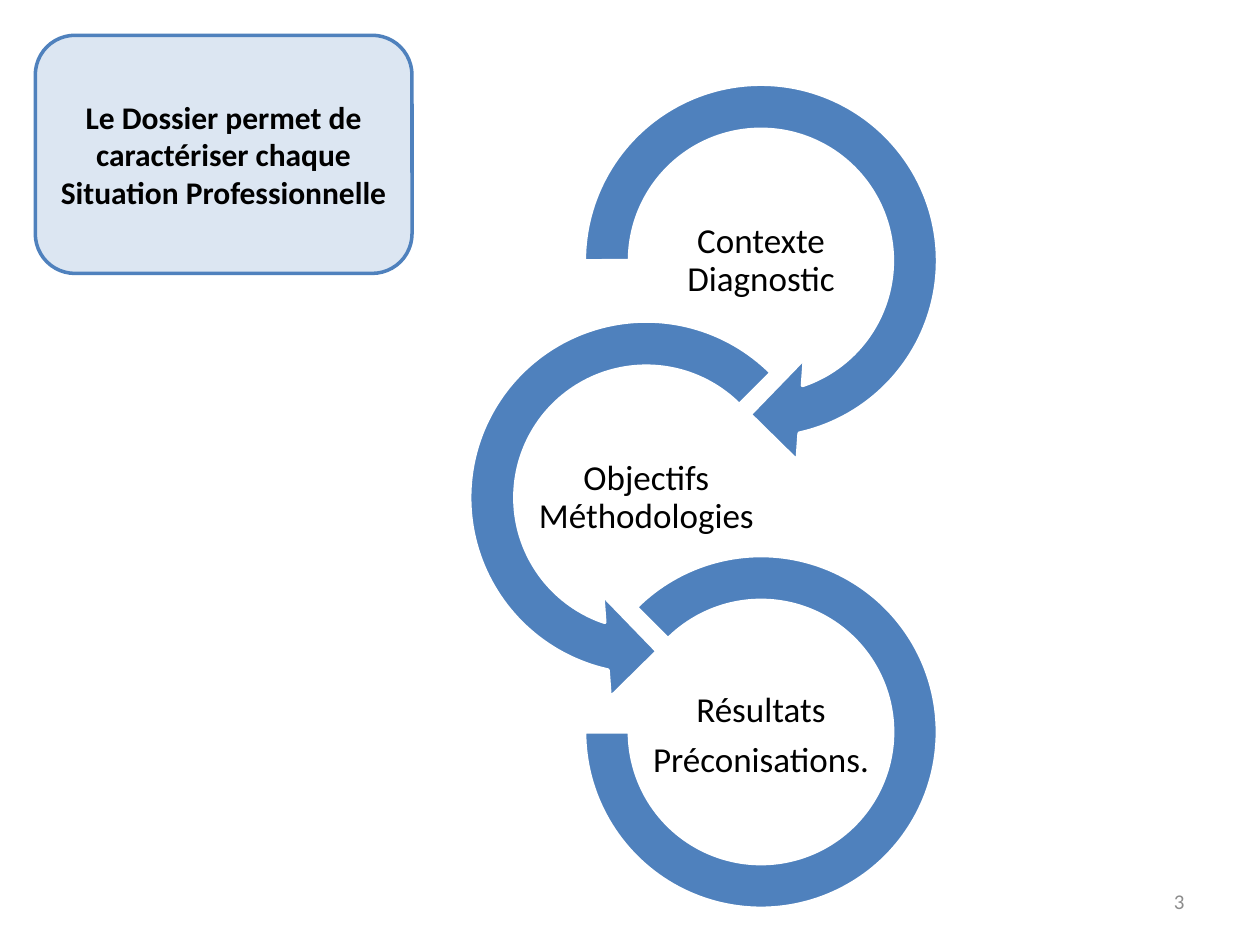
"""Build the slide on how the file describes each work situation."""
from pptx import Presentation
from pptx.dml.color import RGBColor
from pptx.enum.shapes import MSO_SHAPE
from pptx.enum.text import MSO_ANCHOR, PP_ALIGN
from pptx.util import Inches, Pt

RIGHT_ARROW = MSO_SHAPE.CIRCULAR_ARROW
LEFT_ARROW = MSO_SHAPE.LEFT_CIRCULAR_ARROW
ARC, ROUND = MSO_SHAPE.BLOCK_ARC, MSO_SHAPE.ROUNDED_RECTANGLE
MID = MSO_ANCHOR.MIDDLE
CENTER, RIGHT = PP_ALIGN.CENTER, PP_ALIGN.RIGHT

COLORS = {"blue": "4F81BD", "pale": "DCE6F2", "white": "FFFFFF",
          "black": "000000", "gray": "8C8C8C"}
TITLE = "Le Dossier permet de caractériser chaque Situation Professionnelle"
NUMBER = "3"
LABEL_SIZE = (1.81, 0.91)
STEPS = [
    {"form": RIGHT_ARROW, "box": (4.41, 0.44, 3.26), "label_top": 1.62,
     "adjust": (0.11, 11.42, 45, 108, 0.125),
     "lines": ["Contexte Diagnostic"]},
    {"form": LEFT_ARROW, "box": (3.5, 2.32, 3.26), "label_top": 3.5,
     "adjust": (0.11, 11.42, 63, 189, 0.125),
     "lines": ["Objectifs Méthodologies"]},
    {"form": ARC, "box": (4.64, 4.41, 2.8), "label_top": 5.39,
     "adjust": (135, 108, 0.127),
     "lines": ["Résultats", "Préconisations."]},
]


def color(name):
    return RGBColor.from_string(COLORS[name])


def add_form(shapes, form, box, fill, line):
    shape = shapes.add_shape(form, *map(Inches, box))
    shape.shadow.inherit = False
    shape.fill.solid()
    shape.fill.fore_color.rgb = color(fill)
    shape.line.color.rgb = color(line)
    shape.line.width = Pt(2)
    return shape


def write(shape, lines, size, align=CENTER, ink="black", bold=False):
    frame = shape.text_frame
    frame.word_wrap = True
    frame.vertical_anchor = MID
    frame.text = "\n".join(lines)
    for para in frame.paragraphs:
        para.alignment = align
        para.font.name = "Calibri"
        para.font.size = Pt(size)
        para.font.bold = bold
        para.font.color.rgb = color(ink)
    return frame


def add_step(shapes, step):
    left, top, side = step["box"]
    ring = add_form(shapes, step["form"], (left, top, side, side), "blue", "white")
    for index, value in enumerate(step["adjust"]):
        ring.adjustments[index] = value

    wide, high = LABEL_SIZE
    start = left + (side - wide) / 2
    label = shapes.add_textbox(*map(Inches, (start, step["label_top"], wide, high)))
    frame = write(label, step["lines"], 20)
    frame.margin_left = frame.margin_right = Inches(0.01)
    frame.margin_top = frame.margin_bottom = Inches(0.01)
    for para in frame.paragraphs:
        para.line_spacing = 0.9
        para.space_after = Pt(7)


def main():
    deck = Presentation()
    deck.slide_width, deck.slide_height = Inches(10), Inches(7.5)
    slide = deck.slides.add_slide(deck.slide_layouts[6])

    number = slide.shapes.add_textbox(*map(Inches, (7.17, 6.95, 2.33, 0.4)))
    write(number, [NUMBER], 12, RIGHT, "gray")

    group = slide.shapes.add_group_shape()
    for step in STEPS:
        add_step(group.shapes, step)

    title = add_form(slide.shapes, ROUND, (0.28, 0.28, 2.99, 1.89), "pale", "blue")
    write(title, [TITLE], 18, bold=True)
    deck.save("out.pptx")


if __name__ == "__main__":
    main()
